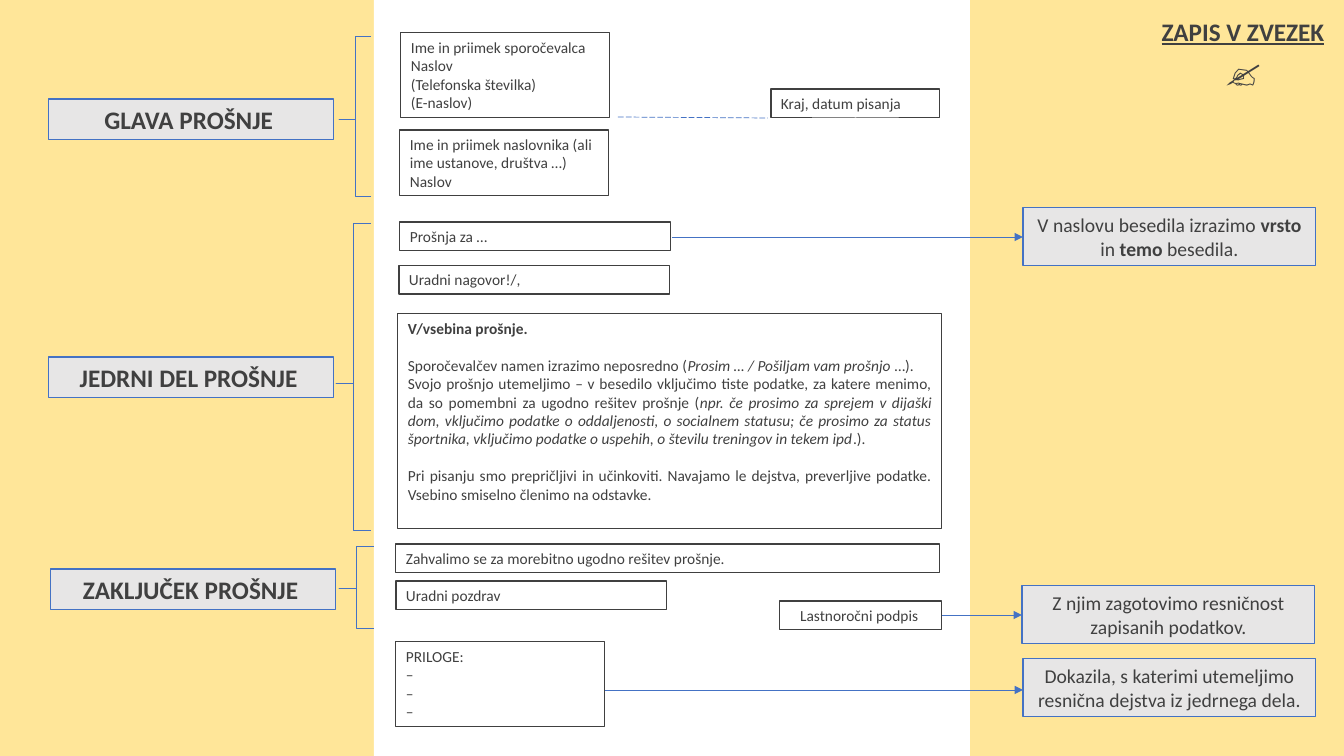
from lxml import etree
from pptx import Presentation
from pptx.dml.color import RGBColor
from pptx.enum.dml import MSO_LINE
from pptx.enum.shapes import MSO_CONNECTOR, MSO_SHAPE
from pptx.enum.text import MSO_ANCHOR, PP_ALIGN, MSO_UNDERLINE
from pptx.oxml.ns import qn
from pptx.util import Pt

PX = 914400 / 100.8
SAND = RGBColor(0xFF, 0xE6, 0x99)
WHITE = RGBColor(0xFF, 0xFF, 0xFF)
GREY = RGBColor(0xE7, 0xE6, 0xE6)
INK = RGBColor(0x40, 0x40, 0x40)
BLUE = RGBColor(0x44, 0x72, 0xC4)

LEFT, CENTER, JUSTIFY = PP_ALIGN.LEFT, PP_ALIGN.CENTER, PP_ALIGN.JUSTIFY
FIELD = {"size": Pt(11)}
PART = {"size": Pt(18), "bold": True}
NOTE = {"size": Pt(14)}
HEADING = {"size": Pt(18), "bold": True, "underline": MSO_UNDERLINE.SINGLE_LINE}
HAND = {"size": Pt(28)}
BOLD = {"bold": True}
ITALIC = {"italic": True}
BLANK_LINE = Pt(13)


def add_panel(kind, box, fill, line, width=0.75):
    panel = slide.shapes.add_shape(kind, *[round(v * PX) for v in box])
    panel.shadow.inherit = False
    if fill is None:
        panel.fill.background()
    else:
        panel.fill.solid()
        panel.fill.fore_color.rgb = fill
    if line is None:
        panel.line.fill.background()
    else:
        panel.line.color.rgb = line
        panel.line.width = Pt(width)
    return panel


def write(panel, paragraphs, base, align):
    frame = panel.text_frame
    frame.word_wrap = True
    frame.vertical_anchor = MSO_ANCHOR.TOP
    for index, (runs, layout) in enumerate(paragraphs):
        paragraph = frame.paragraphs[0] if index == 0 else frame.add_paragraph()
        for name, value in {"alignment": align, **layout}.items():
            setattr(paragraph, name, value)
        for text, style in runs:
            run = paragraph.add_run()
            run.text = text
            run.font.color.rgb = INK
            for name, value in {"name": "Calibri", **base, **style}.items():
                setattr(run.font, name, value)


prs = Presentation()
prs.slide_width, prs.slide_height = round(1344 * PX), round(756 * PX)
slide = prs.slides.add_slide(prs.slide_layouts[6])
slide.background.fill.solid()
slide.background.fill.fore_color.rgb = SAND

add_panel(MSO_SHAPE.RECTANGLE, (374, 0, 596, 756), WHITE, None)

letter_fields = [
    ((401, 33, 209, 85), LEFT,
     ["Ime in priimek sporočevalca Naslov", "(Telefonska številka)", "(E-naslov)"]),
    ((771, 89, 169, 29), LEFT, ["Kraj, datum pisanja"]),
    ((400, 130, 209, 66), LEFT,
     ["Ime in priimek naslovnika (ali ime ustanove, društva …) Naslov"]),
    ((400, 222, 271, 29), LEFT, ["Prošnja za …"]),
    ((399, 265, 271, 29), LEFT, ["Uradni nagovor!/,"]),
    ((396, 544, 544, 29), LEFT, ["Zahvalimo se za morebitno ugodno rešitev prošnje."]),
    ((396, 581, 271, 29), LEFT, ["Uradni pozdrav"]),
    ((780, 601, 162, 29), CENTER, ["Lastnoročni podpis "]),
    ((396, 642, 209, 85), LEFT, ["PRILOGE:", "–", "–", "–"]),
]
for box, align, lines in letter_fields:
    field = add_panel(MSO_SHAPE.RECTANGLE, box, None, INK)
    write(field, [([(line, {})], {}) for line in lines], FIELD, align)

request_body = add_panel(MSO_SHAPE.RECTANGLE, (398, 314, 544, 215), None, INK)
write(request_body, [
    ([("V/vsebina prošnje.", BOLD)], {}),
    ([("Sporočevalčev namen izrazimo neposredno (", {}),
      ("Prosim … / Pošiljam vam prošnjo ", ITALIC),
      ("…).", {})], {"space_before": BLANK_LINE}),
    ([("Svojo prošnjo utemeljimo – v besedilo vključimo tiste podatke, za katere "
       "menimo, da so pomembni za ugodno rešitev prošnje (", {}),
      ("npr. če prosimo za sprejem v dijaški dom, vključimo podatke o oddaljenosti, "
       "o socialnem statusu; če prosimo za status športnika, vključimo podatke o "
       "uspehih, o številu treningov in tekem ipd", ITALIC),
      (".).", {})], {"alignment": JUSTIFY}),
    ([("Pri pisanju smo prepričljivi in učinkoviti. Navajamo le dejstva, preverljive "
       "podatke. Vsebino smiselno členimo na odstavke.", {})],
     {"alignment": JUSTIFY, "space_before": BLANK_LINE}),
], FIELD, LEFT)

letter_parts = [
    ("GLAVA PROŠNJE ", (49, 99), (339, 36, 32, 160)),
    ("JEDRNI DEL PROŠNJE ", (49, 357), (336, 223, 35, 307)),
    ("ZAKLJUČEK PROŠNJE ", (51, 569), (339, 546, 35, 82)),
]
for title, corner, brace_box in letter_parts:
    part = add_panel(MSO_SHAPE.RECTANGLE, (*corner, 285, 41), GREY, BLUE)
    write(part, [([(title, {})], {})], PART, CENTER)
    brace = add_panel(MSO_SHAPE.LEFT_BRACE, brace_box, None, BLUE, 0.5)
    brace.adjustments[0] = 0
    brace.adjustments[1] = 0.521

notes = [
    ((1023, 208), [("V naslovu besedila izrazimo ", {}), ("vrsto", BOLD), (" in ", {}),
                   ("temo ", BOLD), ("besedila.", {})]),
    ((1022, 586), [("Z njim zagotovimo resničnost zapisanih podatkov.", {})]),
    ((1023, 659), [("Dokazila, s katerimi utemeljimo resnična dejstva iz jedrnega dela.", {})]),
]
for corner, runs in notes:
    note = add_panel(MSO_SHAPE.RECTANGLE, (*corner, 293, 58), GREY, BLUE)
    write(note, [(runs, {})], NOTE, CENTER)

links = [
    ((618, 117, 768, 118), False),
    ((672, 237, 1023, 237), True),
    ((942, 615, 1022, 615), True),
    ((605, 690, 1023, 690), True),
]
for ends, has_arrow in links:
    link = slide.shapes.add_connector(MSO_CONNECTOR.STRAIGHT, *[round(v * PX) for v in ends])
    link.line.color.rgb = BLUE
    link.line.width = Pt(0.5)
    if has_arrow:
        etree.SubElement(link.line._get_or_add_ln(), qn("a:tailEnd"), type="triangle")
    else:
        link.line.dash_style = MSO_LINE.LONG_DASH
    etree.SubElement(link._element.spPr, qn("a:effectLst"))

notebook = slide.shapes.add_textbox(*[round(v * PX) for v in (1142, 11, 202, 89)])
write(notebook, [([("ZAPIS V ZVEZEK", HEADING)], {}), ([("✍", HAND)], {})], {}, CENTER)

prs.save("out.pptx")
